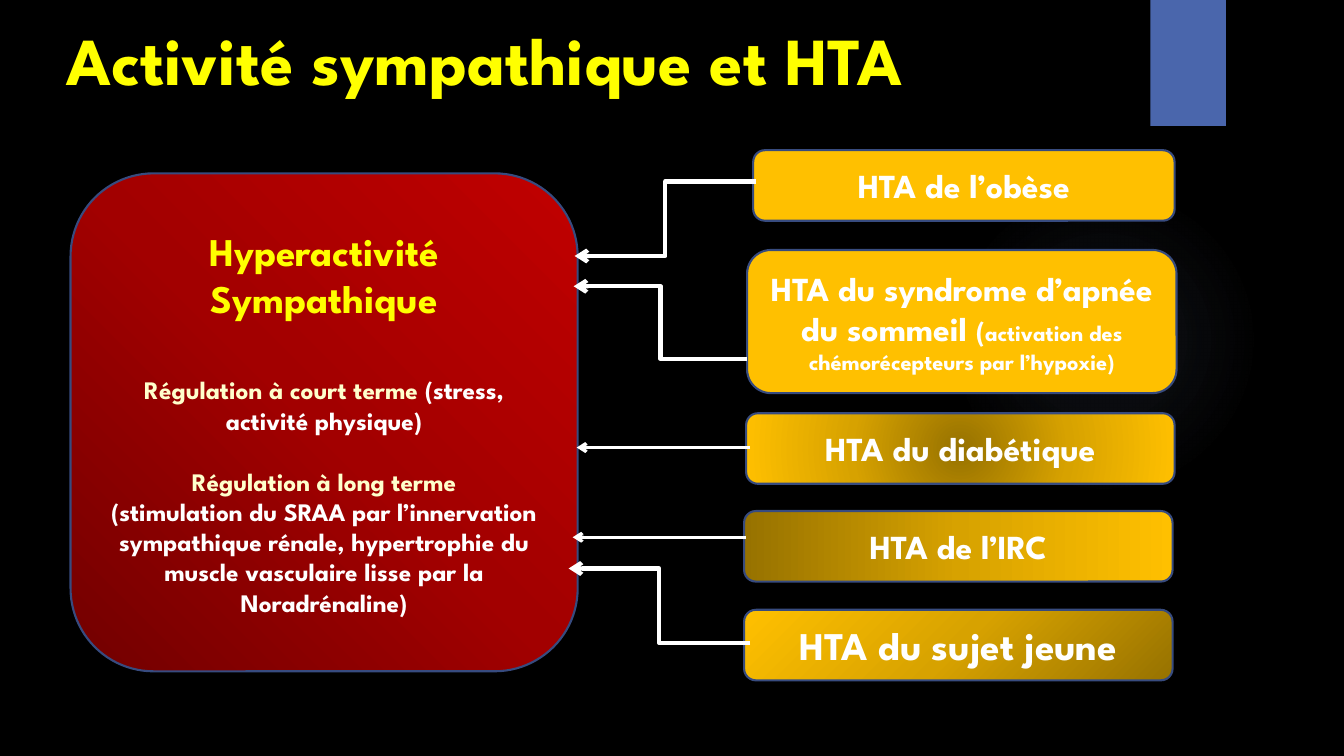
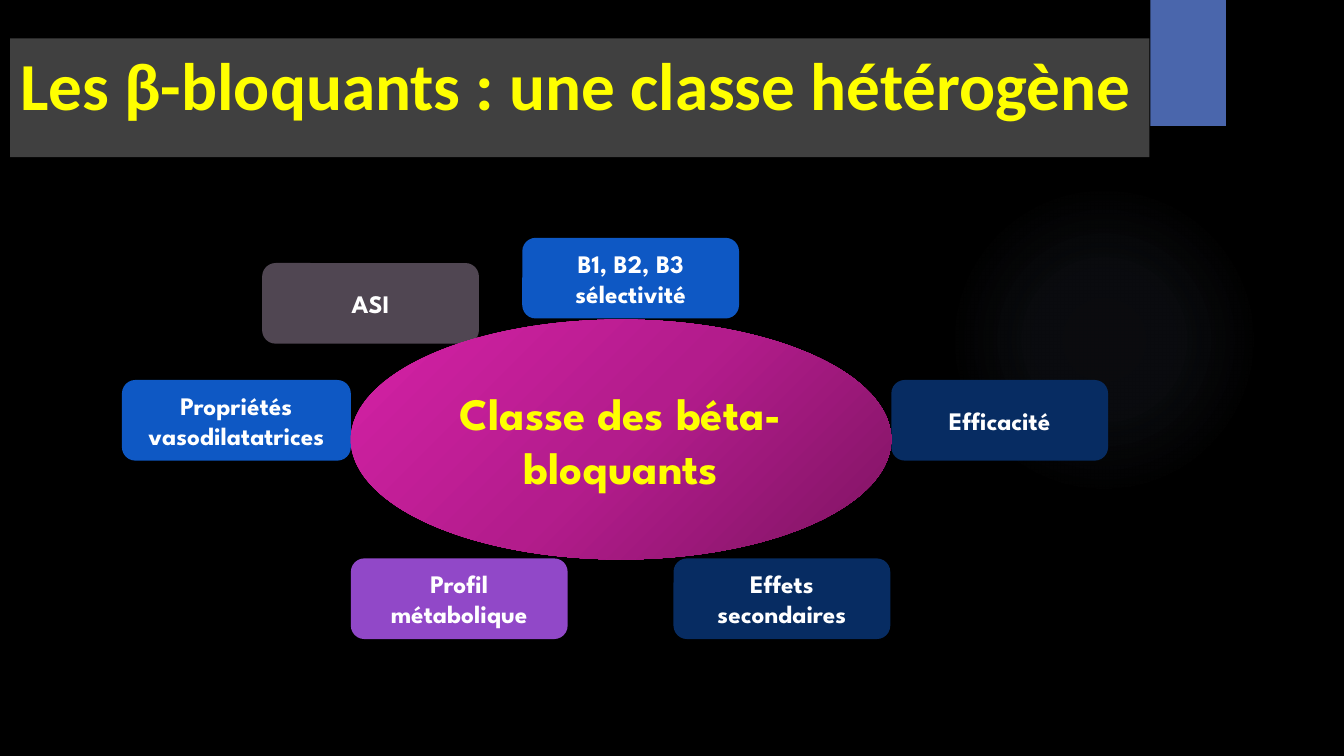
from dataclasses import dataclass

from pptx import Presentation
from pptx import util as u
from pptx.dml.color import RGBColor
from pptx.enum import shapes, text
from pptx.oxml import parse_xml
from pptx.oxml.ns import nsdecls, qn


@dataclass(frozen=True)
class Theme:
    page = "000000"
    band = "4A66AC"
    outline = "374B7F"
    accent = "FFFF00"
    cream = "FFFFCC"
    white = "FFFFFF"
    amber = "FFC000"
    grey = "404040"
    plum = "504652"
    blue = "0E58C4"
    navy = "072C62"
    violet = "9148C8"
    font = "League Spartan"
    plain_font = "Calibri"
    title = 48
    hub = 32
    heading = 28
    label = 24
    bracket = 20
    note = 16
    body = 18
    outline_width = 1.5
    elbow_width = 3
    straight_width = 2.25


T = Theme()
PX = u.Inches(1) // 100
SLIDE_SIZE = (1333, 750)
ROUND, OVAL, RECT = (shapes.MSO_SHAPE.ROUNDED_RECTANGLE, shapes.MSO_SHAPE.OVAL,
                     shapes.MSO_SHAPE.RECTANGLE)

# A gradient is (stops, focus); a stop is (position, colour, opacity) in percent,
# focus is left, top, right, bottom in percent, or None for a left-to-right blend.
CENTRE, BOTTOM_LEFT, BOTTOM_RIGHT = (50, 50, 50, 50), (0, 100, 100, 0), (100, 100, 0, 0)


def blend(*colours):
    return [(position, colour, 100) for position, colour in zip((0, 50, 100), colours)]


GLOW = ([(0, "90A2CF", 7), (36, "90A2CF", 6), (69, "90A2CF", 0)], CENTRE)
RED = (blend("720000", "A20000", "C00000"), BOTTOM_LEFT)
PINK = (blend("7E1462", "B31C8C", "D521A6"), BOTTOM_RIGHT)
GOLD = blend("977200", "D7A200", "FFC000")

# Shared decoration: (geometry, box, fill)
DECOR = [(OVAL, (941, 183, 308, 308), GLOW), (RECT, (1141, 0, 75, 125), T.band)]

# A paragraph is (space before in points, [(wording, size, colour), ...])
SYMPATHETIC = [
    (0, [("Hyperactivité", T.heading, T.accent)]),
    (0, [("Sympathique", T.heading, T.accent)]),
    (38, [("Régulation à court terme ", T.body, T.cream),
          ("(stress, activité physique)", T.body, T.white)]),
    (22, [("Régulation à long terme", T.body, T.cream)]),
    (0, [("(stimulation du SRAA par l’innervation sympathique rénale, hypertrophie "
          "du muscle vasculaire lisse par la Noradrénaline)", T.body, T.white)]),
]


def one_line(wording, size=T.body, colour=T.white):
    return [(0, [(wording, size, colour)])]


APNEA = [(0, [("HTA du syndrome d’apnée du sommeil ", T.label, T.white),
              ("(", T.bracket, T.white),
              ("activation des chémorécepteurs par l’hypoxie)", T.note, T.white)])]

# (box, fill, paragraphs)
HYPERTENSIONS = [
    ((70, 172, 503, 494), RED, SYMPATHETIC),
    ((747, 149, 418, 70), T.amber, one_line("HTA de l’obèse", T.label)),
    ((741, 248, 426, 142), T.amber, APNEA),
    ((740, 410, 425, 70), (GOLD, CENTRE), one_line("HTA du diabétique", T.label)),
    ((738, 507, 425, 70), (GOLD, None), one_line("HTA de l’IRC", T.label)),
    ((738, 605, 425, 70), (GOLD, BOTTOM_RIGHT),
     one_line("HTA du sujet jeune", T.heading)),
]

# (start, end) of each arrow towards the sympathetic panel
ARROWS = [
    ((750, 180), (570, 254)),
    ((741, 356), (569, 284)),
    ((744, 444), (572, 444)),
    ((740, 533), (568, 533)),
    ((744, 638), (564, 564)),
]

# (left, top, width, fill, wording)
PROPERTY_HEIGHT = 80
PROPERTIES = [
    (348, 554, 215, T.violet, "Profil métabolique"),
    (518, 236, 215, T.blue, "B1, B2, B3 sélectivité"),
    (668, 554, 215, T.navy, "Effets secondaires"),
    (121, 377, 227, T.blue, "Propriétés vasodilatatrices"),
    (884, 377, 215, T.navy, "Efficacité"),
    (260, 261, 215, T.plum, "ASI"),
]
HUB_BOX = (348, 317, 536, 238)


def px(*lengths):
    return [length * PX for length in lengths]


def apply(target, **formats):
    for attribute, value in formats.items():
        setattr(target, attribute, value)


def write(run, wording, size, colour, font=T.font):
    run.text = wording
    apply(run.font, name=font, size=u.Pt(size), bold=True)
    run.font.color.rgb = RGBColor.from_string(colour)


def gradient_fill(stops, focus):
    stop_xml = "".join(
        f'<a:gs pos="{position * 1000}"><a:srgbClr val="{colour}">'
        f'<a:alpha val="{opacity * 1000}"/></a:srgbClr></a:gs>'
        for position, colour, opacity in stops)
    if focus is None:
        direction = '<a:lin ang="0" scaled="1"/>'
    else:
        edges = " ".join(f'{side}="{value * 1000}"' for side, value in zip("ltrb", focus))
        direction = f'<a:path path="circle"><a:fillToRect {edges}/></a:path>'
    return parse_xml(f'<a:gradFill {nsdecls("a")} rotWithShape="1">'
                     f'<a:gsLst>{stop_xml}</a:gsLst>{direction}</a:gradFill>')


def paint(shape, fill):
    """Fill with a plain colour or a gradient pair."""
    if isinstance(fill, str):
        shape.fill.solid()
        shape.fill.fore_color.rgb = RGBColor.from_string(fill)
    else:
        shape.fill.background()
        properties = shape.element.spPr
        properties.replace(properties.find(qn("a:noFill")), gradient_fill(*fill))


def add_block(slide, geometry, box, fill, paragraphs=(), outline=None):
    block = slide.shapes.add_shape(geometry, *px(*box))
    block.shadow.inherit = False
    paint(block, fill)
    if outline:
        block.line.color.rgb = RGBColor.from_string(outline)
        block.line.width = u.Pt(T.outline_width)
    else:
        block.line.fill.background()
    frame = block.text_frame
    apply(frame, word_wrap=True, vertical_anchor=text.MSO_ANCHOR.MIDDLE)
    for number, (space, runs) in enumerate(paragraphs):
        paragraph = frame.add_paragraph() if number else frame.paragraphs[0]
        apply(paragraph, alignment=text.PP_ALIGN.CENTER, space_before=u.Pt(space))
        for run in runs:
            write(paragraph.add_run(), *run)
    return block


def add_arrow(slide, start, end):
    straight = start[1] == end[1]
    kind = shapes.MSO_CONNECTOR.STRAIGHT if straight else shapes.MSO_CONNECTOR.ELBOW
    arrow = slide.shapes.add_connector(kind, *px(*start, *end))
    arrow.line.color.rgb = RGBColor.from_string(T.white)
    arrow.line.width = u.Pt(T.straight_width if straight else T.elbow_width)
    arrow.line._get_or_add_ln().append(
        parse_xml(f'<a:tailEnd {nsdecls("a")} type="arrow"/>'))
    arrow.element.spPr.append(parse_xml(f'<a:effectLst {nsdecls("a")}/>'))


def add_titled_slide(deck, wording, box, font=T.font, fill=None):
    slide = deck.slides.add_slide(deck.slide_layouts.get_by_name("Title Only"))
    title = slide.shapes.title
    apply(title, **dict(zip(("left", "top", "width", "height"), px(*box))))
    if fill:
        paint(title, fill)
    apply(title.text_frame, word_wrap=True, auto_size=text.MSO_AUTO_SIZE.NONE,
          vertical_anchor=text.MSO_ANCHOR.TOP)
    paragraph = title.text_frame.paragraphs[0]
    paragraph.alignment = text.PP_ALIGN.LEFT
    write(paragraph.add_run(), wording, T.title, T.accent, font)
    return slide


def decorate_master(deck, slide):
    """Draw the shared decoration and move it behind everything on the master."""
    master = deck.slide_master
    master.background.fill.solid()
    master.background.fill.fore_color.rgb = RGBColor.from_string(T.page)
    for number, (geometry, box, fill) in enumerate(DECOR):
        element = add_block(slide, geometry, box, fill).element
        element.nvSpPr.cNvPr.set("id", str(100 + number))
        master.shapes.element.insert(2 + number, element)


def main():
    deck = Presentation()
    deck.slide_width, deck.slide_height = px(*SLIDE_SIZE)

    sympathetic = add_titled_slide(deck, "Activité sympathique et HTA", (56, 13, 1060, 125))
    decorate_master(deck, sympathetic)
    for box, fill, paragraphs in HYPERTENSIONS:
        add_block(sympathetic, ROUND, box, fill, paragraphs, T.outline)
    for start, end in ARROWS:
        add_arrow(sympathetic, start, end)

    blockers = add_titled_slide(deck, "Les β-bloquants : une classe hétérogène",
                                (10, 38, 1130, 118), T.plain_font, T.grey)
    for left, top, width, fill, wording in PROPERTIES:
        add_block(blockers, ROUND, (left, top, width, PROPERTY_HEIGHT), fill,
                  one_line(wording))
    add_block(blockers, OVAL, HUB_BOX, PINK,
              one_line("Classe des béta-bloquants", T.hub, T.accent))

    deck.save("out.pptx")


if __name__ == "__main__":
    main()
